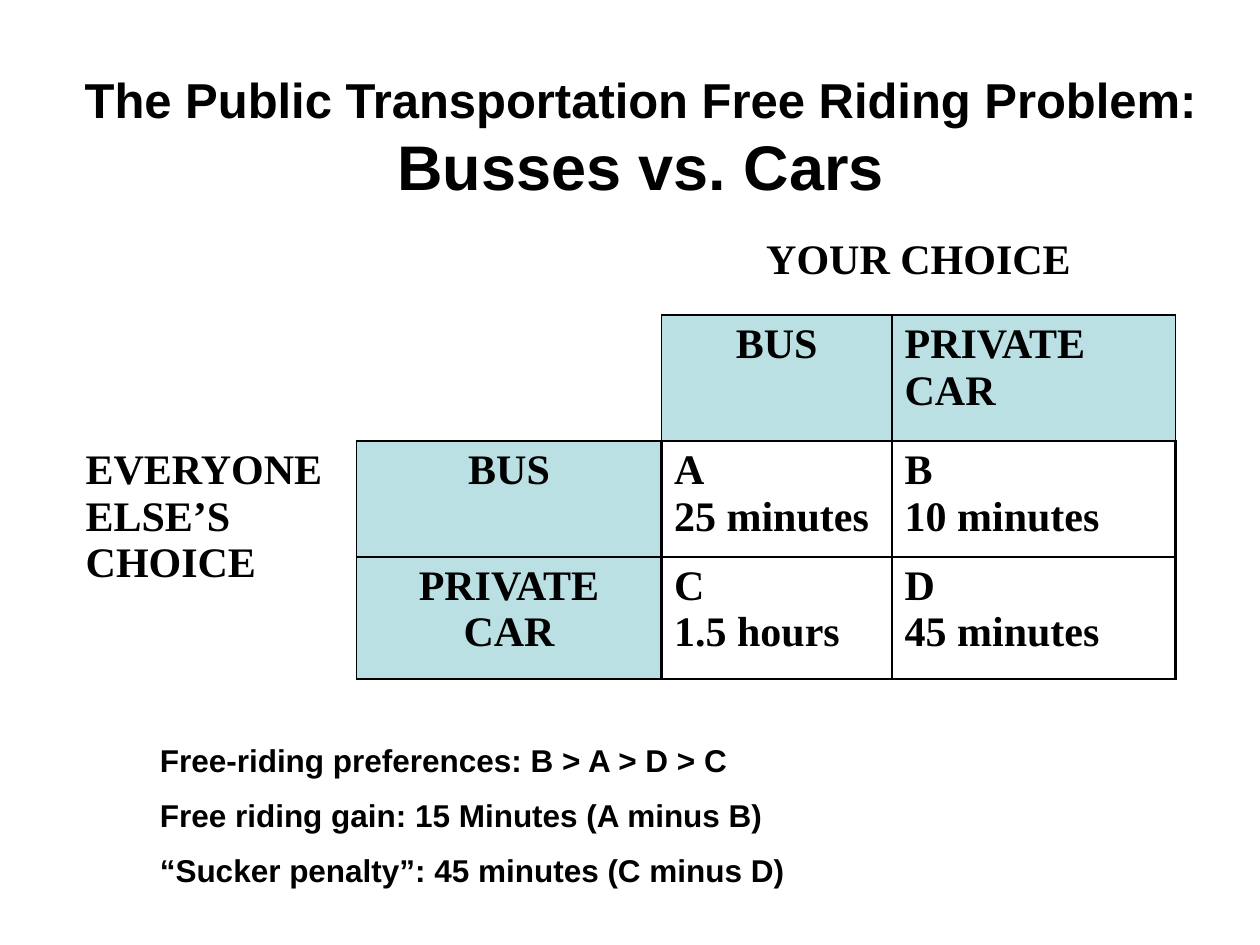
"""Build the slide on free riding in public transportation."""
from dataclasses import dataclass

from lxml import etree
from pptx import Presentation
from pptx.dml.color import RGBColor
from pptx.enum.text import PP_ALIGN
from pptx.oxml.ns import qn
from pptx.util import Inches, Pt

CENTER, LEFT = PP_ALIGN.CENTER, PP_ALIGN.LEFT


@dataclass(frozen=True)
class Theme:
    ink: str = "000000"
    choice_fill: str = "BBE0E3"
    sans: str = "Arial"
    serif: str = "Times New Roman"
    topic_size: int = 28
    subject_size: int = 36
    matrix_size: int = 24
    finding_size: int = 18
    finding_gap: int = 10


THEME = Theme()

TITLE = [
    ("The Public Transportation Free Riding Problem: ", THEME.topic_size),
    ("Busses vs. Cars", THEME.subject_size),
]
TITLE_BOX = (0.42, 0.5, 9.33, 1.17)

FINDINGS = [
    "Free-riding preferences: B > A > D > C",
    "Free riding gain: 15 Minutes (A minus B)",
    "“Sucker penalty”: 45 minutes (C minus D)",
]
FINDINGS_BOX = (1.17, 5.83, 7.92, 1.3)

BLANK, CHOICE, OUTCOME = "blank", "choice", "outcome"
LINE_WIDTH = {BLANK: 0, CHOICE: 1, OUTCOME: 1.5}
MATRIX = [
    [("", BLANK, LEFT), ("", BLANK, LEFT), ("YOUR CHOICE", BLANK, CENTER), ("", BLANK, LEFT)],
    [("", BLANK, LEFT), ("", BLANK, LEFT), ("BUS", CHOICE, CENTER), ("PRIVATE CAR", CHOICE, LEFT)],
    [("EVERYONE ELSE’S\nCHOICE", BLANK, LEFT), ("BUS", CHOICE, CENTER),
     ("A\n25 minutes", OUTCOME, LEFT), ("B\n10 minutes", OUTCOME, LEFT)],
    [("", BLANK, LEFT), ("PRIVATE CAR", CHOICE, CENTER),
     ("C\n1.5 hours", OUTCOME, LEFT), ("D\n45 minutes", OUTCOME, LEFT)],
]
MATRIX_ORIGIN = (0.58, 1.83)
COLUMN_WIDTHS = (2.25, 2.42, 1.83, 2.25)
ROW_HEIGHTS = (0.67, 1, 0.92, 0.97)
MERGES = [((0, 2), (0, 3)), ((2, 0), (3, 0))]
EDGES = {"a:lnL": (0, -1), "a:lnR": (0, 1), "a:lnT": (-1, 0), "a:lnB": (1, 0)}


def style_run(run, font_name, size):
    run.font.name = font_name
    run.font.size = Pt(size)
    run.font.bold = True
    run.font.color.rgb = RGBColor.from_string(THEME.ink)


def add_frame(slide, box):
    frame = slide.shapes.add_textbox(*map(Inches, box)).text_frame
    frame.word_wrap = True
    return frame


def add_title(slide):
    heading = add_frame(slide, TITLE_BOX).paragraphs[0]
    heading.alignment = CENTER
    for words, size in TITLE:
        run = heading.add_run()
        run.text = words
        style_run(run, THEME.sans, size)


def add_findings(slide):
    frame = add_frame(slide, FINDINGS_BOX)
    frame.text = "\n".join(FINDINGS)
    for index, finding in enumerate(frame.paragraphs):
        finding.space_before = Pt(THEME.finding_gap if index else 0)
        style_run(finding.runs[0], THEME.sans, THEME.finding_size)


def role_at(row, column):
    inside = 0 <= row < len(ROW_HEIGHTS) and 0 <= column < len(COLUMN_WIDTHS)
    return MATRIX[row][column][1] if inside else BLANK


def draw_borders(cell, row, column):
    properties = cell._tc.get_or_add_tcPr()
    for tag, (down, across) in EDGES.items():
        neighbour = role_at(row + down, column + across)
        width = max(LINE_WIDTH[role_at(row, column)], LINE_WIDTH[neighbour])
        line = etree.SubElement(properties, qn(tag), w=str(Pt(width)))
        if width:
            fill = etree.SubElement(line, qn("a:solidFill"))
            etree.SubElement(fill, qn("a:srgbClr"), val=THEME.ink)
        else:
            etree.SubElement(line, qn("a:noFill"))


def fill_cell(cell, words, role, alignment):
    if role == CHOICE:
        cell.fill.solid()
        cell.fill.fore_color.rgb = RGBColor.from_string(THEME.choice_fill)
    else:
        cell.fill.background()
    cell.text_frame.text = words
    for paragraph in cell.text_frame.paragraphs:
        paragraph.alignment = alignment
        for run in paragraph.runs:
            style_run(run, THEME.serif, THEME.matrix_size)


def add_matrix(slide):
    extent = (sum(COLUMN_WIDTHS), sum(ROW_HEIGHTS))
    matrix = slide.shapes.add_table(
        len(ROW_HEIGHTS), len(COLUMN_WIDTHS), *map(Inches, MATRIX_ORIGIN + extent)
    ).table
    matrix.first_row = matrix.horz_banding = False
    for column, width in zip(matrix.columns, COLUMN_WIDTHS):
        column.width = Inches(width)
    for row, height in zip(matrix.rows, ROW_HEIGHTS):
        row.height = Inches(height)
    for first, last in MERGES:
        matrix.cell(*first).merge(matrix.cell(*last))
    for row, entries in enumerate(MATRIX):
        for column, entry in enumerate(entries):
            cell = matrix.cell(row, column)
            draw_borders(cell, row, column)
            fill_cell(cell, *entry)


def main():
    deck = Presentation()
    deck.slide_width, deck.slide_height = Inches(10), Inches(7.5)
    slide = deck.slides.add_slide(deck.slide_layouts[6])
    add_matrix(slide)
    add_title(slide)
    add_findings(slide)
    deck.save("out.pptx")


if __name__ == "__main__":
    main()
